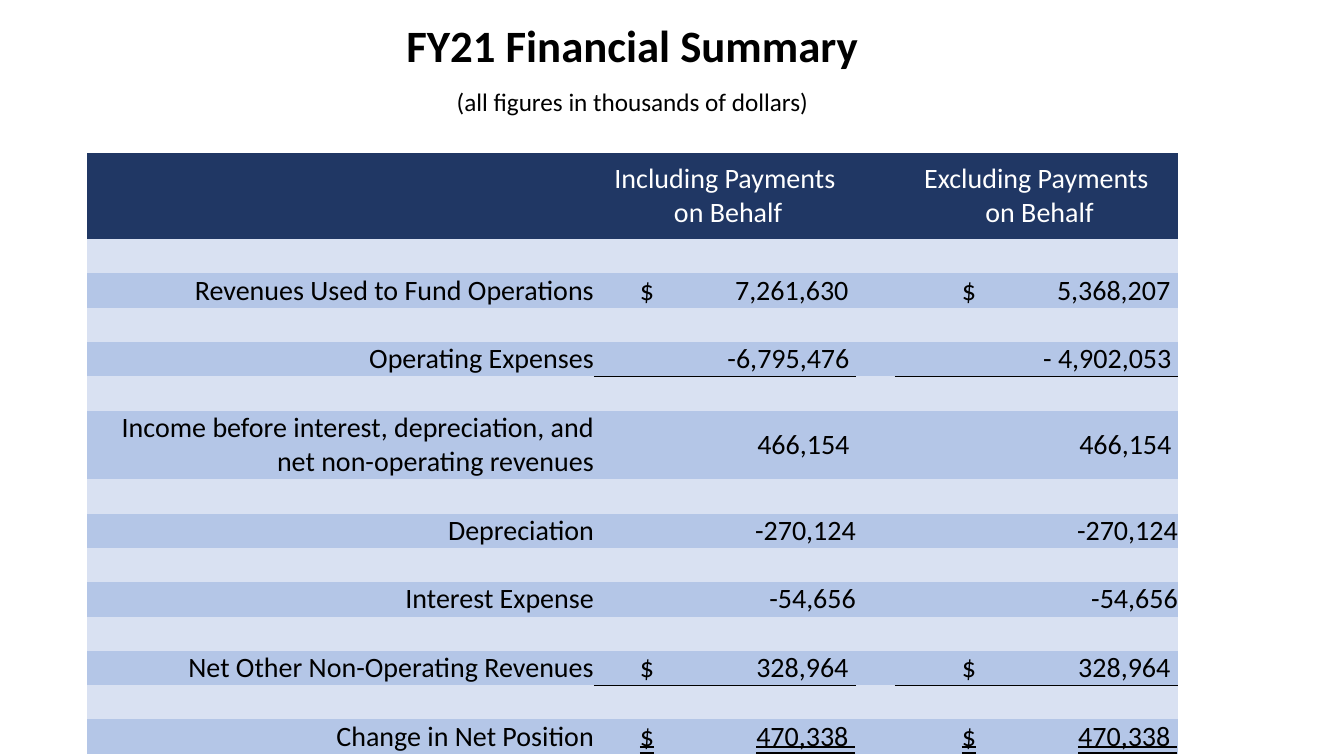
from lxml import etree
from pptx import Presentation
from pptx import util as u
from pptx.dml.color import RGBColor
from pptx.enum import text
from pptx.oxml import ns

COLORS = {"navy": "203764", "pale": "D9E1F2", "blue": "B4C6E7",
          "black": "000000", "white": "FFFFFF"}
COLUMNS = [507, 262, 39, 283]
TITLE_ROWS = [67, 43, 29, 86]
LINE = 34
DOLLAR_INSET = 216

FIGURES = [
    ("Revenues Used to Fund Operations", "$\t7,261,630 ", "$\t5,368,207 "),
    ("Operating Expenses", "-6,795,476 ", "- 4,902,053 "),
    ("Income before interest, depreciation, and net non-operating revenues",
     "466,154 ", "466,154 "),
    ("Depreciation", "-270,124", "-270,124"),
    ("Interest Expense", "-54,656", "-54,656"),
    ("Net Other Non-Operating Revenues", "$\t328,964 ", "$\t328,964 "),
    ("Change in Net Position", "$\t470,338 ", "$\t470,338 "),
]
SUBTOTALS = ("Operating Expenses", "Net Other Non-Operating Revenues")
TOTAL = "Change in Net Position"


def px(n):
    return u.Emu(round(n * 914400 / 100.8))


class Deck:
    font = "Calibri"
    plain_style = "{2D5ABB26-0587-4C30-8999-92F81FD0307C}"

    def __init__(self):
        self.prs = Presentation()
        self.prs.slide_width = px(1344)
        self.prs.slide_height = px(756)
        self.s = self.prs.slides.add_slide(self.prs.slide_layouts[6])

    def table(self, x, y, widths, heights):
        frame = self.s.shapes.add_table(len(heights), len(widths), px(x), px(y),
                                        px(sum(widths)), px(sum(heights)))
        table = frame.table
        table.first_row = table.horz_banding = False
        table._tbl.tblPr.find(ns.qn("a:tableStyleId")).text = self.plain_style
        for column, width in zip(table.columns, widths):
            column.width = px(width)
        for row, height in zip(table.rows, heights):
            row.height = px(height)
        return table

    def cell(self, cell, words="", size=20, fill=None, color="black",
             align="RIGHT", bold=False, inset=(0, 0)):
        cell.margin_left = cell.margin_right = px(inset[0])
        cell.margin_top = cell.margin_bottom = px(inset[1])
        cell.vertical_anchor = text.MSO_ANCHOR.MIDDLE
        if fill:
            cell.fill.solid()
            cell.fill.fore_color.rgb = RGBColor.from_string(COLORS[fill])
        tf = cell.text_frame
        tf.text = words
        for p in tf.paragraphs:
            p.alignment = text.PP_ALIGN[align]
            if not words:
                p._p.get_or_add_endParaRPr().set("sz", str(size * 100))
            for r in p.runs:
                r.font.name = self.font
                r.font.size = u.Pt(size)
                r.font.bold = bold
                r.font.color.rgb = RGBColor.from_string(COLORS[color])

    def amount(self, cell, words, width, total=False):
        if "$" not in words:
            self.cell(cell, words, fill="blue")
            return
        self.cell(cell, "\t" + words, fill="blue", align="LEFT")
        p = cell.text_frame.paragraphs[0]
        tabs = etree.SubElement(p._p.get_or_add_pPr(), ns.qn("a:tabLst"))
        for stop, side in ((width - DOLLAR_INSET, "l"), (width - 1, "r")):
            etree.SubElement(tabs, ns.qn("a:tab"), pos=str(px(stop)), algn=side)
        if total:
            r = p.runs[0]
            r.text = "\t"
            underlined = p.add_run()
            underlined.text = words
            underlined.font.name = self.font
            underlined.font.size = r.font.size
            underlined.font.color.rgb = r.font.color.rgb
            underlined.font.underline = text.MSO_UNDERLINE.DOUBLE_LINE

    def rule_below(self, cell):
        line = etree.Element(ns.qn("a:lnB"), w=str(u.Pt(1)))
        fill = etree.SubElement(line, ns.qn("a:solidFill"))
        etree.SubElement(fill, ns.qn("a:srgbClr"), val=COLORS["black"])
        cell._tc.get_or_add_tcPr().insert(0, line)


def main():
    deck = Deck()
    heights = list(TITLE_ROWS)
    for label, *_ in FIGURES:
        heights += [LINE, LINE * (2 if label.startswith("Income") else 1)]
    summary = deck.table(87, 14, COLUMNS, heights)

    for row, last in ((0, 3), (1, 3), (2, 1)):
        summary.cell(row, 0).merge(summary.cell(row, last))
    deck.cell(summary.cell(0, 0), "FY21 Financial Summary", size=32,
              align="CENTER", bold=True, inset=(12, 6))
    deck.cell(summary.cell(1, 0), "(all figures in thousands of dollars)",
              size=18, align="CENTER", inset=(12, 6))
    for column in (0, 2, 3):
        deck.cell(summary.cell(2, column), size=16)

    headings = ["", "Including Payments\n on Behalf", "",
                "Excluding Payments\n on Behalf"]
    for column, heading in enumerate(headings):
        deck.cell(summary.cell(3, column), heading, fill="navy",
                  color="white", align="CENTER")

    for i, (label, including, excluding) in enumerate(FIGURES):
        gap = len(TITLE_ROWS) + 2 * i
        row = gap + 1
        for column in range(len(COLUMNS)):
            deck.cell(summary.cell(gap, column), fill="pale")
        deck.cell(summary.cell(row, 0), label, fill="blue")
        deck.cell(summary.cell(row, 2), fill="blue")
        for column, words in ((1, including), (3, excluding)):
            cell = summary.cell(row, column)
            deck.amount(cell, words, COLUMNS[column], label == TOTAL)
            if label in SUBTOTALS:
                deck.rule_below(cell)

    deck.prs.save("out.pptx")


if __name__ == "__main__":
    main()
